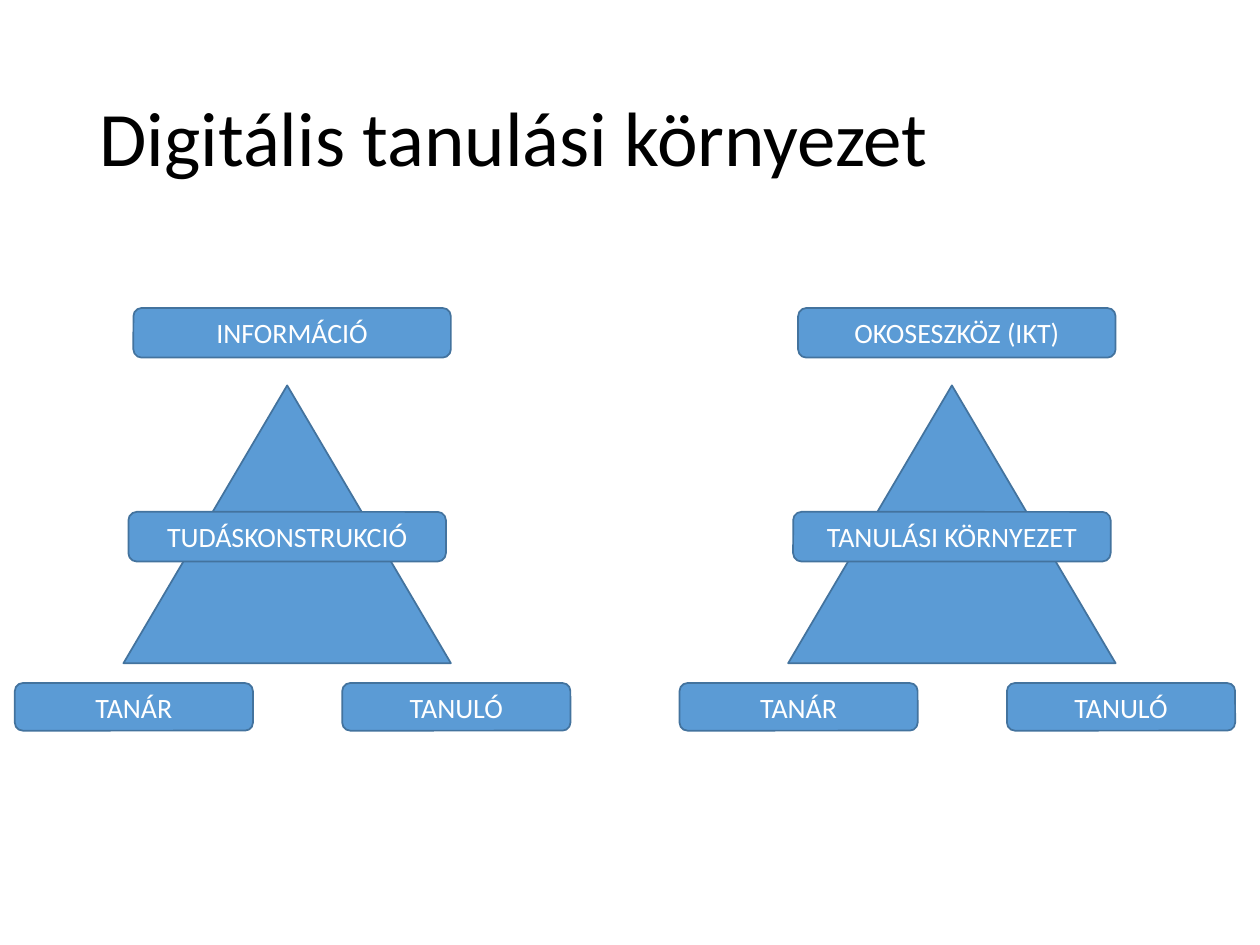
from pptx import Presentation
from pptx import util as u
from pptx.dml.color import RGBColor
from pptx.enum import shapes, text

BLUE = RGBColor(0x5B, 0x9B, 0xD5)
DARK_BLUE = RGBColor(0x43, 0x73, 0x9E)
WHITE = RGBColor(0xFF, 0xFF, 0xFF)
BLACK = RGBColor(0x00, 0x00, 0x00)

MODEL_STEP = 13.4
MODELS = [
    ("INFORMÁCIÓ", "TUDÁSKONSTRUKCIÓ"),
    ("OKOSESZKÖZ (IKT)", "TANULÁSI KÖRNYEZET"),
]


def write_text(box, words, size=16, color=WHITE, align=text.PP_ALIGN.CENTER, line_spacing=1.0):
    frame = box.text_frame
    frame.word_wrap = True
    frame.auto_size = text.MSO_AUTO_SIZE.NONE
    frame.vertical_anchor = text.MSO_ANCHOR.MIDDLE
    para = frame.paragraphs[0]
    para.alignment = align
    para.line_spacing = line_spacing
    span = para.add_run()
    span.text = words
    span.font.name = "Calibri"
    span.font.size = u.Pt(size)
    span.font.color.rgb = color


def add_title(page, words):
    title = page.shapes.title
    title.left, title.top = u.Cm(1.75), u.Cm(1.01)
    title.width, title.height = u.Cm(21.9), u.Cm(3.68)
    write_text(title, words, size=44, color=BLACK, align=text.PP_ALIGN.LEFT, line_spacing=0.9)


def add_blue_shape(group, kind, left, top, width, height):
    shape = group.shapes.add_shape(kind, u.Cm(left), u.Cm(top), u.Cm(width), u.Cm(height))
    shape.shadow.inherit = False
    shape.fill.solid()
    shape.fill.fore_color.rgb = BLUE
    shape.line.color.rgb = DARK_BLUE
    shape.line.width = u.Pt(1)
    return shape


def add_label(group, words, left, top, width, height):
    box = add_blue_shape(group, shapes.MSO_SHAPE.ROUNDED_RECTANGLE, left, top, width, height)
    write_text(box, words)


def add_model(page, left, top_label, middle_label):
    group = page.shapes.add_group_shape()
    add_blue_shape(group, shapes.MSO_SHAPE.ISOSCELES_TRIANGLE, left + 2.19, 7.77, 6.6, 5.6)
    add_label(group, top_label, left + 2.39, 6.21, 6.4, 1)
    add_label(group, "TANÁR", left, 13.77, 4.8, 0.96)
    add_label(group, "TANULÓ", left + 6.6, 13.77, 4.6, 0.96)
    add_label(group, middle_label, left + 2.29, 10.32, 6.4, 1)


def main():
    deck = Presentation()
    deck.slide_width, deck.slide_height = u.Cm(25.4), u.Cm(19.05)
    page = deck.slides.add_slide(deck.slide_layouts.get_by_name("Title Only"))
    add_title(page, "Digitális tanulási környezet")
    for index, labels in enumerate(MODELS):
        add_model(page, 0.3 + index * MODEL_STEP, *labels)
    deck.save("out.pptx")


if __name__ == "__main__":
    main()
